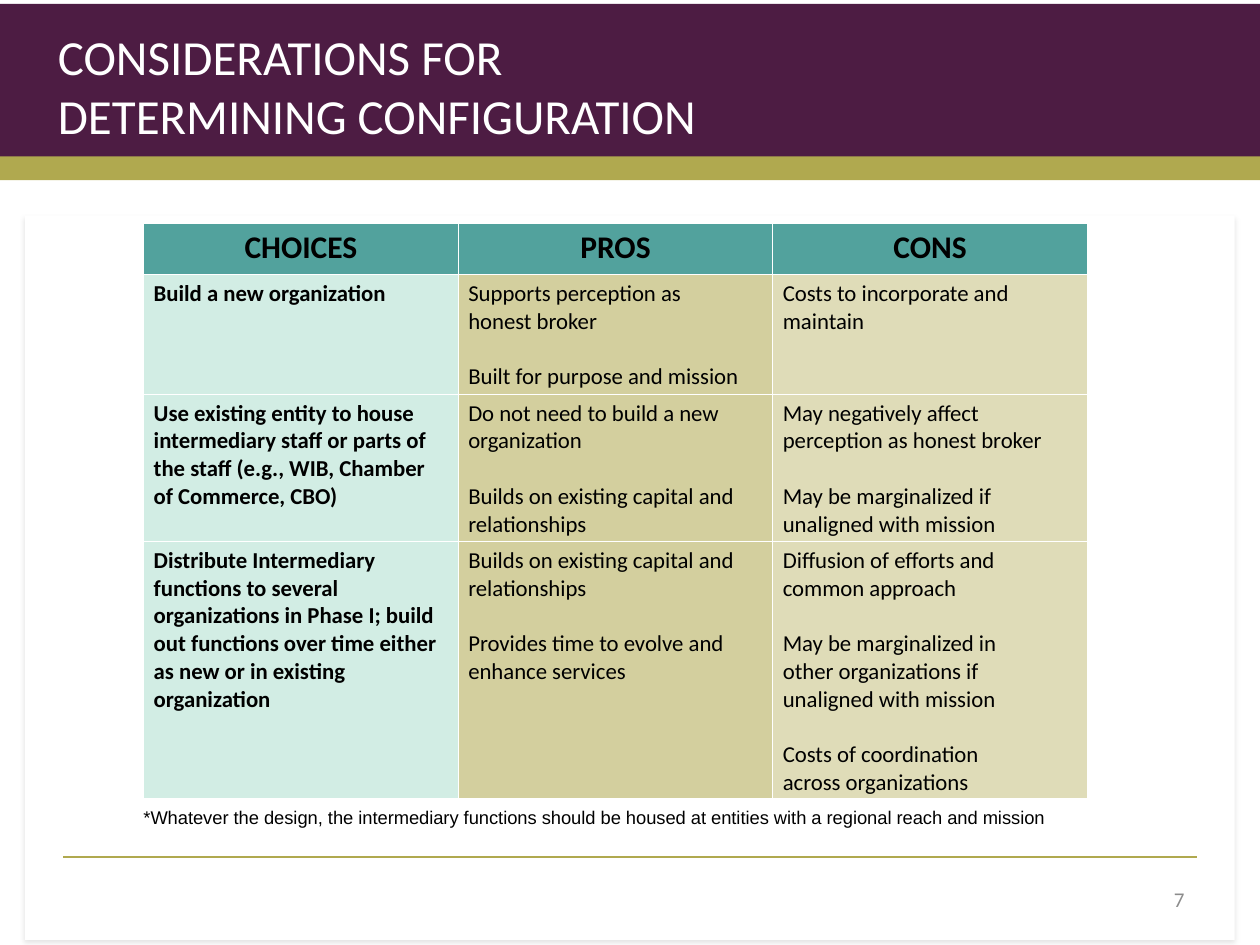
from copy import deepcopy
from lxml import etree
from pptx import Presentation
from pptx.dml.color import RGBColor
from pptx.enum.shapes import MSO_CONNECTOR, MSO_SHAPE
from pptx.enum.text import MSO_ANCHOR, PP_ALIGN
from pptx.oxml.ns import qn
from pptx.util import Inches, Pt

RECT, LINE = MSO_SHAPE.RECTANGLE, MSO_CONNECTOR.STRAIGHT
TOP, MIDDLE = MSO_ANCHOR.TOP, MSO_ANCHOR.MIDDLE
LEFT, CENTER, RIGHT = PP_ALIGN.LEFT, PP_ALIGN.CENTER, PP_ALIGN.RIGHT

# Content: one list of paragraphs per cell, \v breaks a line
TITLE = "CONSIDERATIONS FOR \vDETERMINING CONFIGURATION"
HEADS = ["CHOICES", "PROS", "CONS"]
ROWS = [
    [["Build a new organization"],
     ["Supports perception as \vhonest broker", "Built for purpose and mission"],
     ["Costs to incorporate and maintain"]],
    [["Use existing entity to house intermediary staff or parts of the staff "
      "(e.g., WIB, Chamber of Commerce, CBO)"],
     ["Do not need to build a new organization",
      "Builds on existing capital and relationships"],
     ["May negatively affect perception as honest broker",
      "May be marginalized if unaligned with mission"]],
    [["Distribute Intermediary functions to several organizations in Phase I; "
      "build out functions over time either as new or in existing organization"],
     ["Builds on existing capital and relationships",
      "Provides time to evolve and enhance services"],
     ["Diffusion of efforts and common approach",
      "May be marginalized in \vother organizations if \vunaligned with mission",
      "Costs of coordination \vacross organizations"]],
]
NOTE = ("*Whatever the design, the intermediary functions should be housed "
        "at entities with a regional reach and mission")
PAGE = "7"

# Looks
PLUM, OLIVE, TEAL, MINT = "4D1C43", "B0A94F", "52A29D", "4FB894"
WHITE, BLACK, GRAY = "FFFFFF", "000000", "8C8C8C"
TINTS = [(MINT, 25), (OLIVE, 55), (OLIVE, 40)]
HEIGHTS = [0.41, 0.93, 1.16, 1.99]
WIDTH = 7.49
GAP = 15.9  # one line of 13 pt text
CELL = {"margin_left": 0.08, "margin_right": 0.08,
        "margin_top": 0.04, "margin_bottom": 0.04}


def color(code):
    return RGBColor.from_string(code)


def write(frame, texts, size, code=BLACK, bold=False, align=LEFT, face="Calibri"):
    look = {"name": face, "size": Pt(size), "bold": bold}
    for i, text in enumerate(texts):
        para = frame.add_paragraph() if i else frame.paragraphs[0]
        para.text = text
        para.alignment = align
        para.space_before = Pt(GAP if i else 0)
        for run in para.runs:
            for key, value in look.items():
                setattr(run.font, key, value)
            run.font.color.rgb = color(code)
        # Line breaks take the format of the text around them
        for br in para._p.findall(qn("a:br")):
            br.append(deepcopy(para.runs[0]._r.rPr))


def node(parent, tag, **attrs):
    return etree.SubElement(parent, qn(tag), attrs)


def block(left, top, width, height, code):
    shape = slide.shapes.add_shape(RECT, *map(Inches, (left, top, width, height)))
    shape.shadow.inherit = False
    shape.fill.solid()
    shape.fill.fore_color.rgb = color(code)
    shape.line.fill.background()
    return shape


def label(left, top, width, height, text, anchor=TOP, **look):
    box = slide.shapes.add_textbox(*map(Inches, (left, top, width, height)))
    box.text_frame.word_wrap = True
    box.text_frame.vertical_anchor = anchor
    write(box.text_frame, [text], **look)


def paint(cell, code, alpha=100):
    for key, value in CELL.items():
        setattr(cell, key, Inches(value))
    cell.fill.solid()
    cell.fill.fore_color.rgb = color(code)
    props = cell._tc.tcPr
    if alpha < 100:
        node(props.find(".//" + qn("a:srgbClr")), "a:alpha", val=str(alpha * 1000))
    for i, side in enumerate("LRTB"):
        edge = node(props, "a:ln" + side, w=str(Pt(0.75)))
        node(node(edge, "a:solidFill"), "a:srgbClr", val=WHITE)
        props.insert(i, edge)


deck = Presentation()
deck.slide_width, deck.slide_height = Inches(10), Inches(7.5)
slide = deck.slides.add_slide(deck.slide_layouts[5])

# Header bands and card
block(0, 0.03, 10, 1.25, PLUM)
block(0, 1.24, 10, 0.19, OLIVE)
card = block(0.2, 1.71, 9.6, 5.75, WHITE)
shade = node(card._element.spPr.find(qn("a:effectLst")), "a:outerShdw",
             blurRad=str(Pt(3.1)), dist=str(Pt(1.8)), dir="5400000",
             algn="t", rotWithShape="0")
node(node(shade, "a:srgbClr", val=BLACK), "a:alpha", val="10000")

# Footer rule
rule = slide.shapes.add_connector(LINE, *map(Inches, (0.5, 6.8, 9.5, 6.8)))
rule.line.color.rgb = color(OLIVE)
rule.line.width = Pt(1)
node(rule._element.spPr, "a:effectLst")

# Title, brought in front of the bands
title = slide.shapes.title
title.left, title.top, title.width, title.height = map(Inches, (0.36, 0.16, 7.48, 1.21))
title.text_frame.vertical_anchor = TOP
write(title.text_frame, [TITLE], 28, WHITE)
slide.shapes._spTree.append(title._element)

# Page number and note
label(7.17, 6.94, 2.33, 0.4, PAGE, MIDDLE, size=12, code=GRAY, align=RIGHT)
label(1.04, 6.35, WIDTH, 0.28, NOTE, size=10.5, face="Arial")

# Table
spot = map(Inches, (1.14, 1.77, WIDTH, sum(HEIGHTS)))
table = slide.shapes.add_table(len(HEIGHTS), len(HEADS), *spot).table
table.horz_banding = False
for row, height in zip(table.rows, HEIGHTS):
    row.height = Inches(height)
for c, head in enumerate(HEADS):
    table.columns[c].width = Inches(WIDTH / len(HEADS))
    paint(table.cell(0, c), TEAL)
    write(table.cell(0, c).text_frame, [head], 18, bold=True, align=CENTER)
    for r, row in enumerate(ROWS, 1):
        paint(table.cell(r, c), *TINTS[c])
        write(table.cell(r, c).text_frame, row[c], 13, bold=c == 0)

deck.save("out.pptx")
